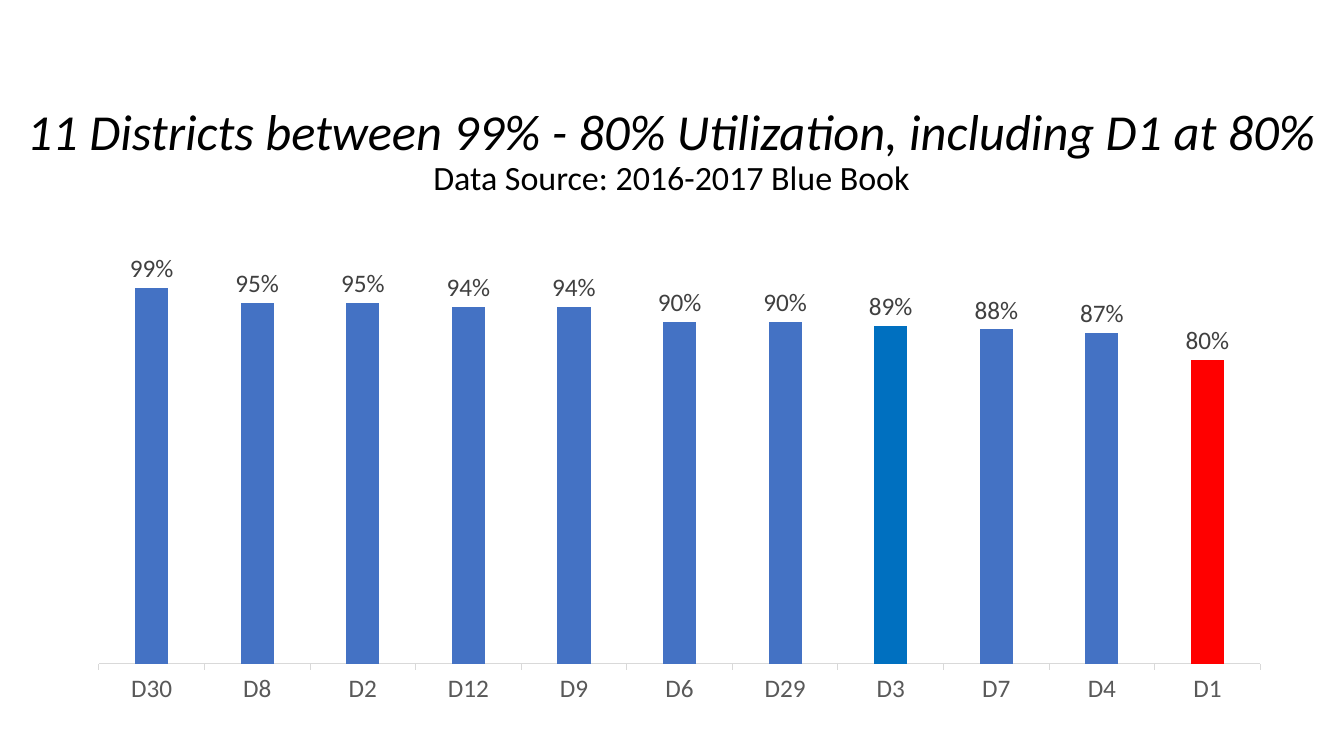
from dataclasses import dataclass

from lxml import etree
from pptx import Presentation
from pptx.chart.data import CategoryChartData
from pptx.dml.color import RGBColor
from pptx.enum.chart import XL_CHART_TYPE as ChartType
from pptx.enum.chart import XL_LABEL_POSITION as LabelPosition
from pptx.enum.chart import XL_TICK_MARK as TickMark
from pptx.enum.text import MSO_ANCHOR as Anchor
from pptx.enum.text import MSO_AUTO_SIZE as AutoSize
from pptx.enum.text import PP_ALIGN as Align
from pptx.oxml.ns import qn
from pptx.util import Inches, Pt


@dataclass(frozen=True)
class Theme:
    font: str = "Calibri"
    title_size: float = 36
    source_size: float = 24.3
    chart_size: float = 18
    text: RGBColor = RGBColor(0x00, 0x00, 0x00)
    axis_text: RGBColor = RGBColor(0x59, 0x59, 0x59)
    label_text: RGBColor = RGBColor(0x40, 0x40, 0x40)
    axis_line: RGBColor = RGBColor(0xD9, 0xD9, 0xD9)
    bar: RGBColor = RGBColor(0x44, 0x72, 0xC4)
    bar_blue: RGBColor = RGBColor(0x00, 0x70, 0xC0)
    bar_red: RGBColor = RGBColor(0xFF, 0x00, 0x00)


THEME = Theme()
UTILIZATION = {
    "D30": 0.99, "D8": 0.95, "D2": 0.95, "D12": 0.94, "D9": 0.94, "D6": 0.9,
    "D29": 0.9, "D3": 0.89, "D7": 0.88, "D4": 0.87, "D1": 0.8,
}
HIGHLIGHTS = {"D3": THEME.bar_blue, "D1": THEME.bar_red}
PLOT_LAYOUT = {"x": 0.02, "y": 0.02, "w": 0.96, "h": 0.88}


def style_font(font, size, color, italic=False):
    font.name = THEME.font
    font.size = Pt(size)
    font.italic = italic
    font.color.rgb = color


def add_heading(slide, left, top, width, height):
    title = slide.shapes.title
    title.left, title.top = Inches(left), Inches(top)
    title.width, title.height = Inches(width), Inches(height)
    frame = title.text_frame
    frame.word_wrap = True
    frame.auto_size = AutoSize.NONE
    frame.vertical_anchor = Anchor.TOP
    frame.margin_top = Inches(0.55)
    frame.text = (
        "11 Districts between 99% - 80% Utilization, including D1 at 80%\n"
        "Data Source: 2016-2017 Blue Book"
    )
    styles = [(THEME.title_size, True), (THEME.source_size, False)]
    for paragraph, (size, italic) in zip(frame.paragraphs, styles):
        paragraph.alignment = Align.CENTER
        paragraph.line_spacing = 0.9
        paragraph.space_before = Pt(0)
        style_font(paragraph.font, size, THEME.text, italic)


def set_plot_layout(chart):
    plot_area = chart.element.find(f".//{qn('c:plotArea')}")
    layout = plot_area.find(qn("c:layout"))
    if layout is None:
        layout = etree.Element(qn("c:layout"))
        plot_area.insert(0, layout)
    manual = etree.SubElement(layout, qn("c:manualLayout"))
    settings = {"layoutTarget": "inner", "xMode": "edge", "yMode": "edge"}
    for name, value in {**settings, **PLOT_LAYOUT}.items():
        etree.SubElement(manual, qn(f"c:{name}")).set("val", str(value))


def add_utilization_chart(slide, left, top, width, height):
    data = CategoryChartData(number_format="0%")
    data.categories = list(UTILIZATION)
    data.add_series("Series 1", list(UTILIZATION.values()))
    box = [Inches(length) for length in (left, top, width, height)]
    chart = slide.shapes.add_chart(ChartType.COLUMN_CLUSTERED, *box, data).chart
    chart.has_title = False
    chart.has_legend = False
    style_font(chart.font, THEME.chart_size, THEME.axis_text)
    set_plot_layout(chart)

    value_axis = chart.value_axis
    value_axis.visible = False
    value_axis.has_major_gridlines = False
    value_axis.minimum_scale = 0
    value_axis.maximum_scale = 1.2

    category_axis = chart.category_axis
    category_axis.major_tick_mark = TickMark.OUTSIDE
    category_axis.format.line.color.rgb = THEME.axis_line
    category_axis.format.line.width = Pt(0.75)
    style_font(category_axis.tick_labels.font, THEME.chart_size, THEME.axis_text)

    plot = chart.plots[0]
    plot.gap_width = 219
    plot.overlap = -27
    plot.vary_by_categories = False
    series = plot.series[0]
    series.format.fill.solid()
    series.format.fill.fore_color.rgb = THEME.bar
    for index, district in enumerate(UTILIZATION):
        if district in HIGHLIGHTS:
            fill = series.points[index].format.fill
            fill.solid()
            fill.fore_color.rgb = HIGHLIGHTS[district]

    labels = series.data_labels
    labels.show_value = True
    labels.position = LabelPosition.OUTSIDE_END
    labels.number_format = "0%"
    labels.number_format_is_linked = False
    style_font(labels.font, THEME.chart_size, THEME.label_text)


def main():
    presentation = Presentation()
    presentation.slide_width = Inches(13.33)
    presentation.slide_height = Inches(7.5)
    slide = presentation.slides.add_slide(presentation.slide_layouts[5])
    add_heading(slide, 0.1, 0.51, 13.12, 1.45)
    add_utilization_chart(slide, 0.74, 1.96, 12, 5.14)
    presentation.save("out.pptx")


if __name__ == "__main__":
    main()
